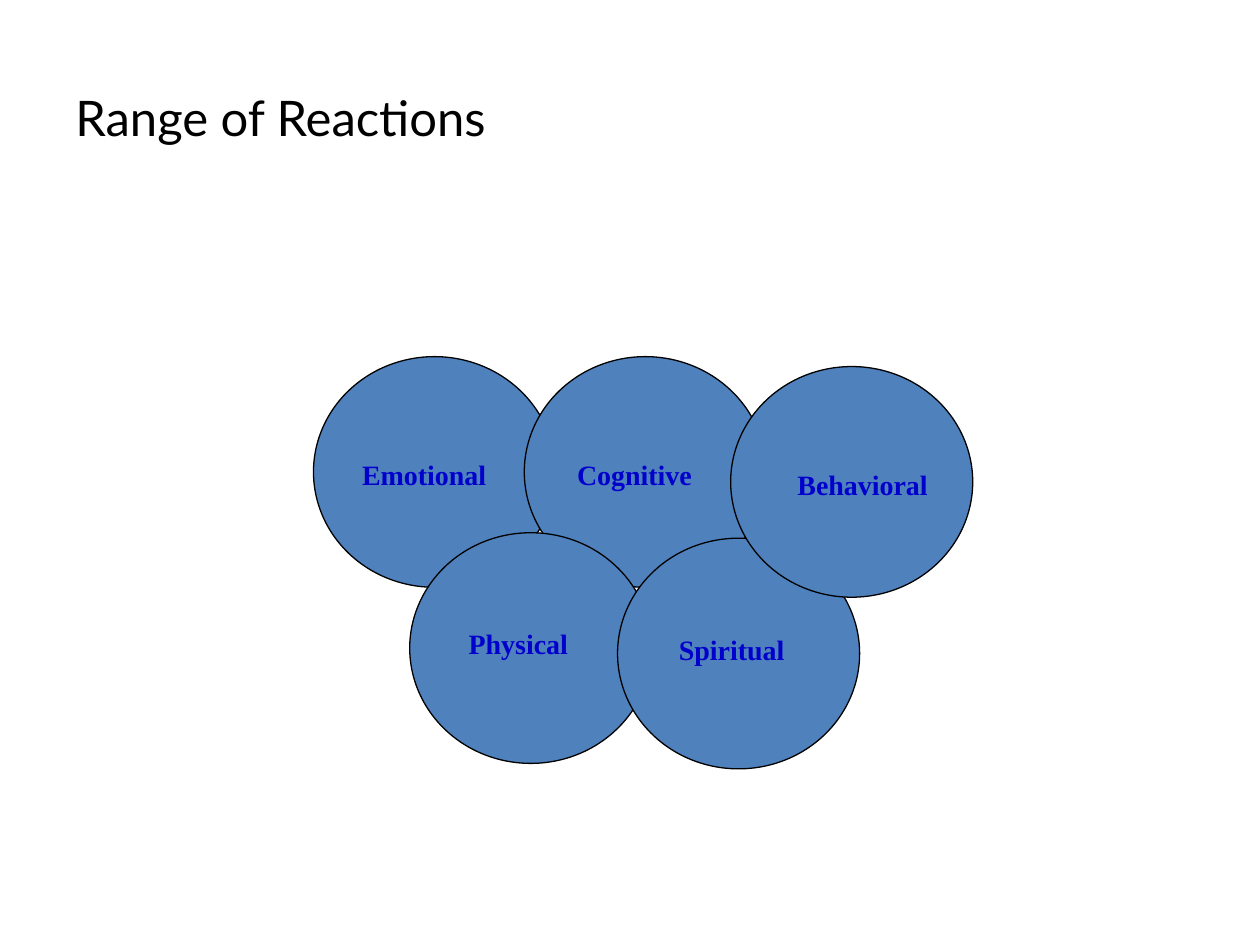
from pptx import Presentation
from pptx.dml.color import RGBColor
from pptx.enum.shapes import MSO_SHAPE as Shape
from pptx.enum.text import MSO_ANCHOR as Anchor, PP_ALIGN as Align
from pptx.util import Cm, Pt

COLORS = {"title": "000000", "circle": "4F81BD", "outline": "000000", "label": "0000CC"}
TITLE = "Range of Reactions"
CIRCLE_SIZE = (4.88, 4.65)
LABEL_SIZE = (3.18, 0.94)
REACTIONS = [
    {"name": "Emotional", "circle": (6.32, 7.19), "label": (6.96, 9.09)},
    {"name": "Cognitive", "circle": (10.57, 7.19), "label": (11.2, 9.09)},
    {"name": "Physical", "circle": (8.26, 10.74), "label": (8.86, 12.5)},
    {"name": "Spiritual", "circle": (12.45, 10.85), "label": (13.16, 12.62)},
    {"name": "Behavioral", "circle": (14.73, 7.39), "label": (15.8, 9.3)},
]


def color(name):
    return RGBColor.from_string(COLORS[name])


def box(position, size):
    return [Cm(length) for length in (*position, *size)]


def add_text(slide, text, position, size, font_name, points, color_name, align, anchor, bold=False):
    text_frame = slide.shapes.add_textbox(*box(position, size)).text_frame
    text_frame.text = text
    text_frame.word_wrap = True
    text_frame.vertical_anchor = anchor
    paragraph = text_frame.paragraphs[0]
    paragraph.alignment = align
    font = paragraph.runs[0].font
    font.name, font.size, font.bold = font_name, Pt(points), bold
    font.color.rgb = color(color_name)


def add_circle(slide, position):
    circle = slide.shapes.add_shape(Shape.OVAL, *box(position, CIRCLE_SIZE))
    circle.shadow.inherit = False
    circle.fill.solid()
    circle.fill.fore_color.rgb = color("circle")
    circle.line.color.rgb = color("outline")
    circle.line.width = Pt(0.75)


def main():
    presentation = Presentation()
    presentation.slide_width, presentation.slide_height = Cm(25.4), Cm(19.05)
    slide = presentation.slides.add_slide(presentation.slide_layouts[6])
    add_text(slide, TITLE, (1.27, 0.76), (22.86, 3.18), "Lato", 28, "title",
             Align.LEFT, Anchor.MIDDLE)
    for reaction in REACTIONS:
        add_circle(slide, reaction["circle"])
    for reaction in REACTIONS:
        add_text(slide, reaction["name"], reaction["label"], LABEL_SIZE, "Times New Roman", 16,
                 "label", Align.CENTER, Anchor.TOP, bold=True)
    presentation.save("out.pptx")


if __name__ == "__main__":
    main()
